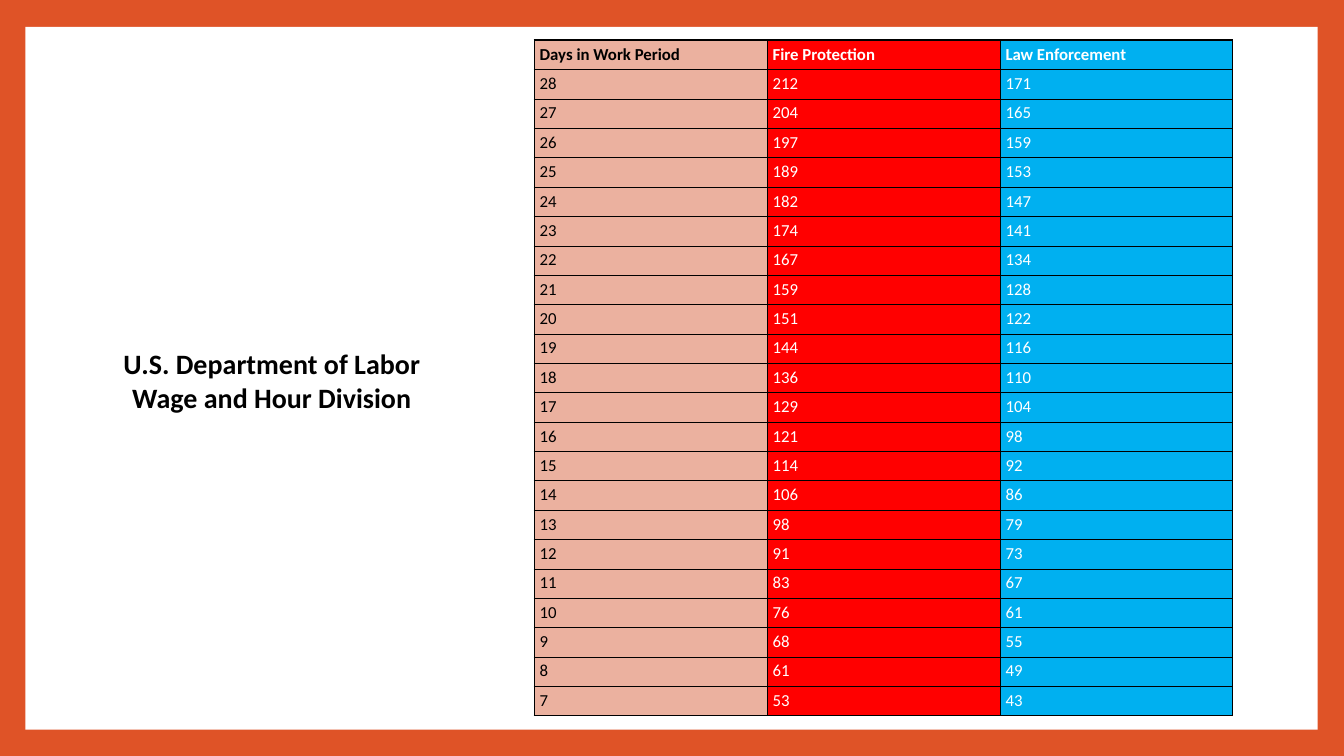
from lxml import etree
from pptx import Presentation
from pptx.dml.color import RGBColor
from pptx.enum import shapes, text
from pptx.oxml import ns
from pptx.util import Cm, Pt

ORANGE = RGBColor(0xDF, 0x53, 0x27)
PEACH = RGBColor(0xEB, 0xB1, 0x9F)
RED = RGBColor(0xFF, 0x00, 0x00)
BLUE = RGBColor(0x00, 0xB0, 0xF0)
BLACK = RGBColor(0, 0, 0)
WHITE = RGBColor(0xFF, 0xFF, 0xFF)

TITLE = ["U.S. Department of Labor", "Wage and Hour Division"]
# heading, fill, text colour
COLUMNS = [
    ("Days in Work Period", PEACH, BLACK),
    ("Fire Protection", RED, WHITE),
    ("Law Enforcement", BLUE, WHITE),
]
FIRST_PERIOD = 28
FIRE = [212, 204, 197, 189, 182, 174, 167, 159, 151, 144, 136,
        129, 121, 114, 106, 98, 91, 83, 76, 68, 61, 53]
LAW = [171, 165, 159, 153, 147, 141, 134, 128, 122, 116, 110,
       104, 98, 92, 86, 79, 73, 67, 61, 55, 49, 43]
HOURS = [(FIRST_PERIOD - i, *pair) for i, pair in enumerate(zip(FIRE, LAW))]

TABLE_LEFT, TABLE_TOP = 13.46, 1.01
COL_WIDTH, ROW_HEIGHT = 5.87, 0.74
CELL_MARGIN = 0.07
THIN, THICK = 0.25, 1


def write(tf, lines, size=12, bold=False, color=BLACK, align=None,
          spacing=None, gap=None):
    for i, line in enumerate(lines):
        p = tf.paragraphs[0] if i == 0 else tf.add_paragraph()
        p.alignment, p.line_spacing = align, spacing
        p.space_before = p.space_after = gap
        r = p.add_run()
        r.text = line
        r.font.name, r.font.size, r.font.bold = "Calibri", Pt(size), bold
        r.font.color.rgb = color


def set_borders(cell, **widths):
    """Draw black cell borders; keys L, R, T, B give widths in points."""
    tc_pr = cell._tc.get_or_add_tcPr()
    for side, width in widths.items():
        ln = etree.SubElement(tc_pr, ns.qn(f"a:ln{side}"), w=str(Pt(width)))
        fill = etree.SubElement(ln, ns.qn("a:solidFill"))
        etree.SubElement(fill, ns.qn("a:srgbClr"), val=str(BLACK))


def add_hours_table(s):
    rows = [[heading for heading, _, _ in COLUMNS], *HOURS]
    last_row, last_col = len(rows) - 1, len(COLUMNS) - 1
    table = s.shapes.add_table(
        len(rows), len(COLUMNS), Cm(TABLE_LEFT), Cm(TABLE_TOP),
        Cm(COL_WIDTH * len(COLUMNS)), Cm(ROW_HEIGHT * len(rows))).table
    table.first_row = table.horz_banding = False
    for column in table.columns:
        column.width = Cm(COL_WIDTH)
    for i, row in enumerate(rows):
        table.rows[i].height = Cm(ROW_HEIGHT)
        for j, (value, (_, fill, color)) in enumerate(zip(row, COLUMNS)):
            cell = table.cell(i, j)
            set_borders(cell,
                        L=THICK if j == 0 else THIN,
                        R=THICK if j == last_col else THIN,
                        T=THICK if i == 0 else THIN,
                        B=THICK if i == last_row else THIN)
            cell.fill.solid()
            cell.fill.fore_color.rgb = fill
            cell.margin_left = cell.margin_right = Cm(CELL_MARGIN)
            cell.margin_top = cell.margin_bottom = Cm(CELL_MARGIN)
            write(cell.text_frame, [str(value)], bold=i == 0, color=color,
                  spacing=1.07, gap=Pt(2.2))
            p_pr = cell.text_frame.paragraphs[0]._p.get_or_add_pPr()
            p_pr.set("marL", str(Cm(CELL_MARGIN)))


def main():
    prs = Presentation()
    prs.slide_width, prs.slide_height = Cm(33.87), Cm(19.05)
    s = prs.slides.add_slide(prs.slide_layouts[6])
    s.background.fill.solid()
    s.background.fill.fore_color.rgb = ORANGE

    panel = s.shapes.add_shape(shapes.MSO_SHAPE.RECTANGLE,
                               Cm(0.64), Cm(0.68), Cm(32.57), Cm(17.71))
    panel.shadow.inherit = False
    panel.fill.solid()
    panel.fill.fore_color.rgb = WHITE
    panel.line.fill.background()

    add_hours_table(s)

    title = s.shapes.add_textbox(Cm(2.62), Cm(8.61), Cm(8.46), Cm(1.96))
    tf = title.text_frame
    tf.word_wrap = False
    tf.auto_size = text.MSO_AUTO_SIZE.SHAPE_TO_FIT_TEXT
    write(tf, TITLE, size=20, bold=True, align=text.PP_ALIGN.CENTER)

    prs.save("out.pptx")


if __name__ == "__main__":
    main()
